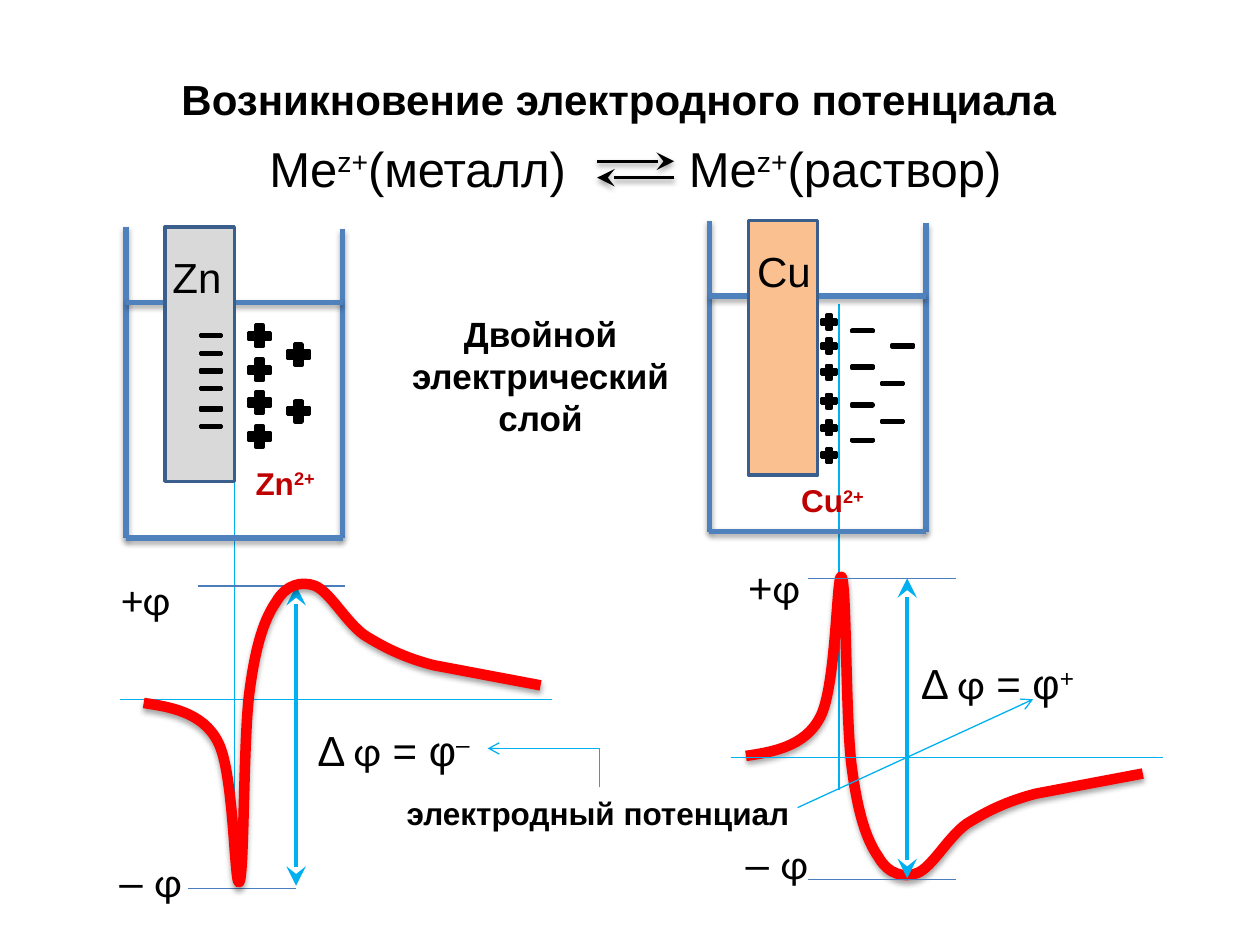
import pptx
import pptx.dml.color
import pptx.enum.shapes
import pptx.enum.text
import pptx.oxml
import pptx.oxml.ns
import pptx.util

Inches = pptx.util.Inches
Pt = pptx.util.Pt
RGB = pptx.dml.color.RGBColor
SHAPE = pptx.enum.shapes.MSO_SHAPE
CONNECTOR = pptx.enum.shapes.MSO_CONNECTOR
ALIGN = pptx.enum.text.PP_ALIGN
qn = pptx.oxml.ns.qn

BLACK = RGB(0x00, 0x00, 0x00)
RED = RGB(0xFF, 0x00, 0x00)
ION_RED = RGB(0xC0, 0x00, 0x00)
CYAN = RGB(0x00, 0xB0, 0xF0)
LEVEL_BLUE = RGB(0x4B, 0x7E, 0xBC)
GLASS_BLUE = RGB(0x4F, 0x81, 0xBD)
ELECTRODE_EDGE = RGB(0x3A, 0x5F, 0x8C)
ZINC = RGB(0xD9, 0xD9, 0xD9)
COPPER = RGB(0xFA, 0xC0, 0x90)


def drawing_xml(tag, attributes="", content=""):
    return pptx.oxml.parse_xml(
        f'<a:{tag} {pptx.oxml.ns.nsdecls("a")} {attributes}>{content}</a:{tag}>')


SHADOW = (
    '<a:outerShdw blurRad="39370" dist="22860" dir="5400000" rotWithShape="0">'
    '<a:srgbClr val="000000"><a:alpha val="35000"/></a:srgbClr></a:outerShdw>'
)
TEXT_OUTLINE = '<a:solidFill><a:srgbClr val="000000"/></a:solidFill>'


def write_text(frame, runs, size=24, color=BLACK, bold=False, align=ALIGN.LEFT,
               wrap=True, tab=None, outlined=False):
    """Fill a frame from runs: a string, or (text, font, superscript) tuples."""
    frame.word_wrap = wrap
    frame.vertical_anchor = pptx.enum.text.MSO_ANCHOR.TOP
    paragraph = frame.paragraphs[0]
    paragraph.alignment = align
    if tab:
        paragraph._p.get_or_add_pPr().append(
            drawing_xml("tabLst", content=f'<a:tab pos="{Inches(tab)}" algn="l"/>'))
    if isinstance(runs, str):
        runs = [(runs, "Arial", False)]
    for text, font, superscript in runs:
        run = paragraph.add_run()
        run.text = text
        run.font.name = font
        run.font.size = Pt(size)
        run.font.bold = bold
        run.font.color.rgb = color
        properties = run._r.get_or_add_rPr()
        if superscript:
            properties.set("baseline", "30000")
        if outlined:
            properties.insert(0, drawing_xml("ln", 'w="9525"', TEXT_OUTLINE))


class Diagram:
    def __init__(self, slide):
        self.shapes = slide.shapes

    def title(self, text, left, top, width, height):
        title = self.shapes.title
        title.left, title.top = Inches(left), Inches(top)
        title.width, title.height = Inches(width), Inches(height)
        title.text_frame.auto_size = pptx.enum.text.MSO_AUTO_SIZE.NONE
        write_text(title.text_frame, text, bold=True)

    def label(self, runs, left, top, width, height=0.48, **text_format):
        box = self.shapes.add_textbox(
            Inches(left), Inches(top), Inches(width), Inches(height))
        write_text(box.text_frame, runs, **text_format)

    def stroke(self, shape, color, weight, head=None, tail=None, shadow=False):
        shape.line.color.rgb = color
        shape.line.width = Pt(weight)
        outline = shape.line._get_or_add_ln()
        for end, arrow in (("headEnd", head), ("tailEnd", tail)):
            if arrow:
                size = 'w="lg" len="lg"' if arrow == "stealth" else ""
                outline.append(drawing_xml(end, f'type="{arrow}" {size}'))
        shape._element.spPr.append(
            drawing_xml("effectLst", content=SHADOW if shadow else ""))

    def line(self, x1, y1, x2, y2, color=CYAN, weight=0.75,
             kind=CONNECTOR.STRAIGHT, **stroke_format):
        connector = self.shapes.add_connector(
            kind, Inches(x1), Inches(y1), Inches(x2), Inches(y2))
        self.stroke(connector, color, weight, **stroke_format)
        return connector

    def corner_arrow(self, x1, y1, x2, y2):
        """Go up from the start, then left to the arrowhead."""
        across, up = x1 - x2, y1 - y2
        middle_x, middle_y = (x1 + x2) / 2, (y1 + y2) / 2
        connector = self.line(
            middle_x - up / 2, middle_y + across / 2,
            middle_x + up / 2, middle_y - across / 2,
            kind=CONNECTOR.ELBOW, tail="arrow")
        properties = connector._element.spPr
        properties.find(qn("a:xfrm")).set("rot", "16200000")
        properties.find(qn("a:prstGeom")).set("prst", "bentConnector2")

    def shape(self, kind, left, top, width, height, fill=BLACK, edge=BLACK):
        shape = self.shapes.add_shape(
            kind, Inches(left), Inches(top), Inches(width), Inches(height))
        shape.shadow.inherit = False
        shape.fill.solid()
        shape.fill.fore_color.rgb = fill
        shape.line.color.rgb = edge
        shape.line.width = Pt(2)

    def curve(self, points):
        """Join points as cubic segments (three points each); a leftover is straight."""
        start, *rest = [(Inches(x), Inches(y)) for x, y in points]
        builder = self.shapes.build_freeform(*start)
        builder.add_line_segments(rest, close=False)
        curve = builder.convert_to_shape()
        segments = list(curve._element.iter(qn("a:lnTo")))
        for first in range(0, len(segments) - 2, 3):
            cubic = drawing_xml("cubicBezTo")
            segments[first].addprevious(cubic)
            for segment in segments[first:first + 3]:
                cubic.append(segment[0])
                segment.getparent().remove(segment)
        curve.fill.background()
        self.stroke(curve, RED, 6, shadow=True)

    def beaker(self, left, top, metal, fill):
        right, bottom, water = left + 1.72, top + 2.47, top + 0.6
        for ends in ((left, top, left, bottom), (right, top + 0.02, right, bottom),
                     (left, bottom, right, bottom), (left, water, right, water)):
            self.line(*ends, color=GLASS_BLUE, weight=3, shadow=True)
        self.shape(SHAPE.RECTANGLE, left + 0.31, top, 0.55, 2.02, fill, ELECTRODE_EDGE)

    def charges(self, kind, places, width, height):
        for left, top in places:
            self.shape(kind, left, top, width, height)


def delta_phi(sign):
    return [("∆", "Arial", False), (" φ", "Calibri", False),
            (" = φ", "Arial", False), (sign, "Arial", True)]


def main():
    presentation = pptx.Presentation()
    presentation.slide_width, presentation.slide_height = Inches(10), Inches(7.5)
    diagram = Diagram(presentation.slides.add_slide(presentation.slide_layouts[5]))
    diagram.title("Возникновение электродного потенциала", 1.34, 0.53, 7.42, 0.48)

    equilibrium = [("Me", "Arial", False), ("z+", "Arial", True),
                   ("(металл)\tMe", "Arial", False), ("z+", "Arial", True),
                   ("(раствор)", "Arial", False)]
    diagram.label(equilibrium, 2.04, 1.05, 6.33, 0.55, size=28, tab=3.33)
    for x1, x2, y in ((4.74, 5.35, 1.28), (5.35, 4.74, 1.41)):
        diagram.line(x1, y, x2, y, BLACK, 2, tail="stealth", shadow=True)

    # Potential curves: zinc is the copper curve shifted and turned over
    diagram.line(1.86, 2.81, 1.86, 6.67)
    diagram.line(6.66, 2.41, 6.66, 6.27)
    copper_curve = [
        (5.92, 6),
        (6.12, 5.97), (6.39, 5.93), (6.51, 5.69),
        (6.64, 5.45), (6.64, 4.51), (6.68, 4.58),
        (6.72, 4.64), (6.71, 5.72), (6.76, 6.09),
        (6.81, 6.47), (6.88, 6.67), (6.97, 6.8),
        (7.05, 6.94), (7.17, 6.97), (7.28, 6.93),
        (7.4, 6.88), (7.52, 6.65), (7.67, 6.54),
        (7.83, 6.44), (7.99, 6.36), (8.22, 6.3),
        (9.07, 6.14),
    ]
    zinc_curve = [(x - 4.78, 11.58 - y) for x, y in copper_curve]

    minus_phi = [("– ", "Arial", False), ("φ", "Calibri", False)]
    diagram.line(0.95, 5.55, 4.38, 5.55)
    diagram.line(1.57, 4.65, 2.74, 4.65, LEVEL_BLUE)
    diagram.line(1.49, 7.05, 2.35, 7.05, LEVEL_BLUE)
    diagram.label([("+φ", "Calibri", False)], 0.87, 4.5, 0.7)
    diagram.label(minus_phi, 0.85, 6.74, 0.86)
    diagram.line(2.35, 4.65, 2.35, 7.03, weight=2.25, head="stealth", tail="stealth")
    diagram.label(delta_phi("–"), 2.43, 5.7, 1.44, wrap=False)

    diagram.curve(copper_curve)
    diagram.line(5.8, 6.01, 9.23, 6.01)
    diagram.line(7.2, 4.59, 7.2, 6.97, weight=2.25, head="stealth", tail="stealth")
    for level in (4.59, 6.98):
        diagram.line(6.41, level, 7.59, level, LEVEL_BLUE)
    diagram.label([("+", "Arial", False), ("φ", "Calibri", False)], 5.84, 4.41, 0.7)
    diagram.label(minus_phi, 5.82, 6.6, 0.86)
    diagram.label(delta_phi("+"), 7.22, 5.17, 1.45, wrap=False)
    diagram.curve(zinc_curve)

    diagram.label("электродный потенциал", 3.13, 6.25, 3.27, 0.4,
                  size=18, bold=True, wrap=False)
    diagram.corner_arrow(4.76, 6.25, 3.87, 5.94)
    diagram.line(6.33, 6.41, 8.2, 5.55, tail="arrow")

    # Half-cells with their charges
    diagram.beaker(1, 1.8, "Zn", ZINC)
    diagram.charges(SHAPE.MATH_MINUS,
                    [(1.56, y) for y in (2.63, 2.77, 2.91, 3.05, 3.21, 3.35)], 0.23, 0.07)
    diagram.charges(SHAPE.MATH_PLUS,
                    [(1.94, y) for y in (2.55, 2.82, 3.08, 3.35)]
                    + [(2.25, 2.7), (2.25, 3.15)], 0.24, 0.23)
    diagram.label("Zn", 1.27, 1.95, 0.78)
    diagram.beaker(5.63, 1.75, "Cu", COPPER)
    diagram.charges(SHAPE.MATH_MINUS,
                    [(6.73, y) for y in (2.59, 2.88, 3.18, 3.46)]
                    + [(7.05, 2.71), (6.97, 3.01), (6.97, 3.31)], 0.23, 0.07)
    diagram.charges(SHAPE.MATH_PLUS,
                    [(6.5, y) for y in (2.48, 2.67, 2.88, 3.11, 3.32, 3.54)], 0.16, 0.15)
    diagram.label("Cu", 5.91, 1.9, 0.78)

    diagram.label("Двойной электрический слой", 3.13, 2.43, 2.32, 1.11,
                  size=20, bold=True, align=ALIGN.CENTER, outlined=True)
    for metal, left, top, width in (("Zn", 1.93, 3.63, 0.7), ("Cu", 6.26, 3.77, 0.73)):
        diagram.label([(metal, "Arial", False), ("2+", "Arial", True)], left, top, width,
                      0.4, size=18, color=ION_RED, bold=True, wrap=False, outlined=True)

    presentation.save("out.pptx")


if __name__ == "__main__":
    main()
